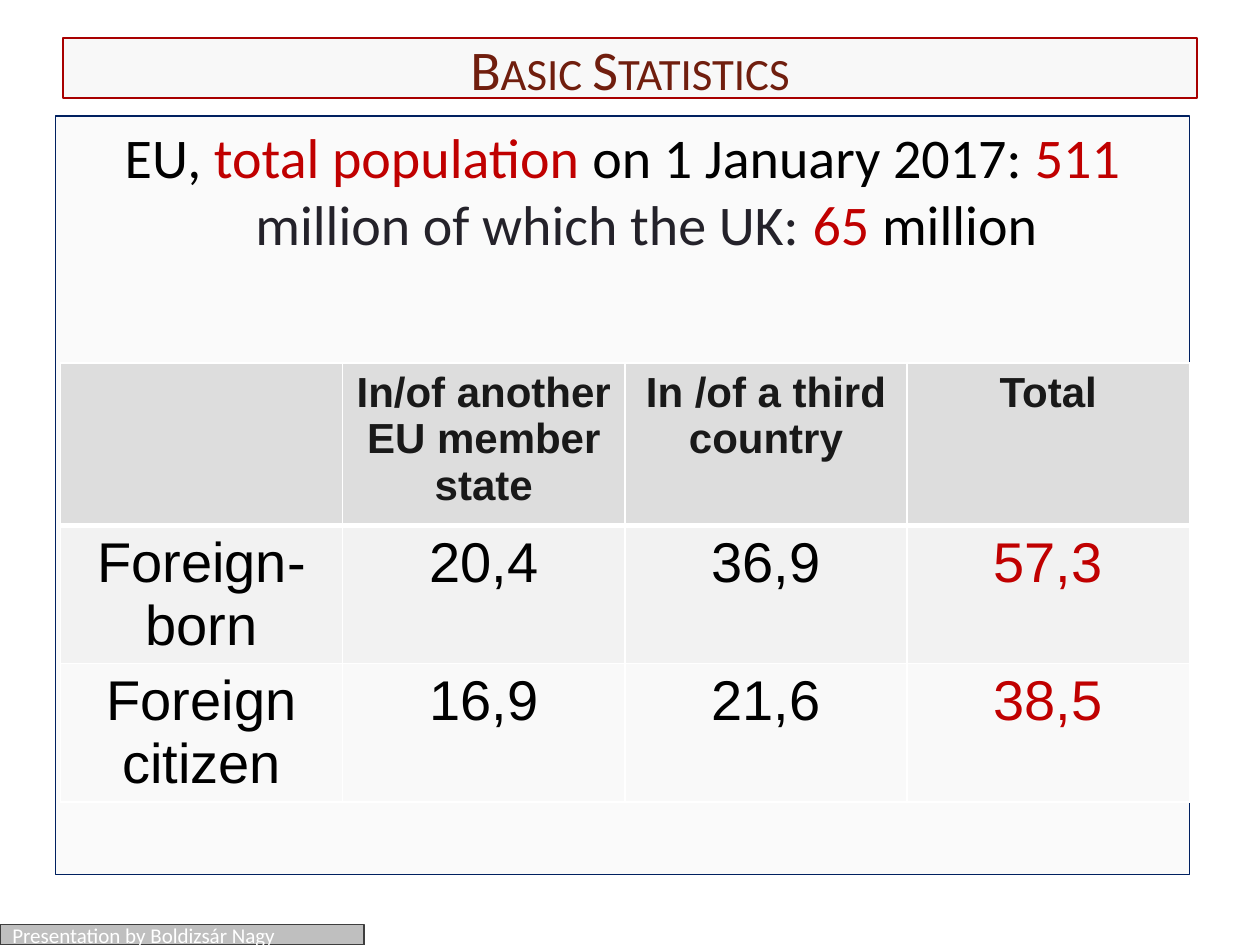
from dataclasses import dataclass

from lxml.etree import SubElement
from pptx import Presentation
from pptx.dml.color import RGBColor as RGB
from pptx.enum.shapes import MSO_SHAPE as Shape
from pptx.enum.text import MSO_ANCHOR as Anchor, PP_ALIGN as Align
from pptx.oxml.ns import qn
from pptx.util import Inches, Pt


@dataclass(frozen=True)
class Theme:
    """Colours, fonts and type sizes of the slide."""
    white: str = "FFFFFF"
    black: str = "000000"
    red: str = "C00000"
    ink: str = "24222A"
    title: str = "701E0E"
    title_line: str = "A80000"
    body_line: str = "002060"
    panel: str = "F2F2F2"
    head_fill: str = "DDDDDD"
    head_text: str = "191919"
    last_fill: str = "F9F9F9"
    foot_fill: str = "BFBFBF"
    foot_line: str = "3E3E3E"
    text_font: str = "Calibri"
    table_font: str = "Arial"
    large: int = 32
    medium: int = 24
    small: int = 12


T = Theme()
W, H = Inches(10), Inches(7.5)


def area(x, y, w, h):
    """Turn percentages of the slide into lengths."""
    return [round(v * side / 100) for v, side in zip((x, y, w, h), (W, H, W, H))]


def add_run(p, text, color, size, font, bold=False):
    """Append one formatted run to a paragraph."""
    r = p.add_run()
    r.text = text
    f = r.font
    f.name, f.size, f.bold = font, Pt(size), bold
    f.color.rgb = RGB.from_string(color)
    return r


def add_panel(slide, box, fill, line, width, anchor, alpha=None):
    """Add an outlined rectangle and return its first paragraph."""
    sp = slide.shapes.add_shape(Shape.RECTANGLE, *area(*box))
    sp.shadow.inherit = False
    sp.fill.solid()
    sp.fill.fore_color.rgb = RGB.from_string(fill)
    if alpha is not None:
        clr = sp._element.spPr.find(qn("a:solidFill"))[0]
        SubElement(clr, qn("a:alpha"), val=str(alpha * 1000))
    sp.line.color.rgb = RGB.from_string(line)
    sp.line.width = Pt(width)
    tf = sp.text_frame
    tf.word_wrap, tf.vertical_anchor = True, anchor
    return tf.paragraphs[0]


def add_title(slide):
    """Add the small-caps heading."""
    p = add_panel(slide, (5, 4, 90, 6.4), T.panel, T.title_line, 1.25, Anchor.MIDDLE, 50)
    p.alignment = Align.CENTER
    r = add_run(p, "Basic Statistics", T.title, T.large, T.text_font)
    r.font._element.set("cap", "small")


def add_population(slide):
    """Add the panel with the population statement."""
    p = add_panel(slide, (4.4, 12.27, 90, 80.27), T.panel, T.body_line, 0.75, Anchor.TOP, 32)
    p.alignment, p.space_before = Align.CENTER, Pt(T.large * 0.2)
    pPr = p._p.get_or_add_pPr()
    indent = Inches(0.38)
    pPr.set("marL", str(indent))
    pPr.set("indent", str(-indent))
    for text, color in (
        ("EU, ", T.black),
        ("total population ", T.red),
        ("on 1 January 2017: ", T.black),
        ("511 ", T.red),
        ("million of which the UK: ", T.ink),
        ("65 ", T.red),
        ("million", T.black),
    ):
        add_run(p, text, color, T.large, T.text_font)


def add_footer(slide):
    """Add the presenter strip."""
    p = add_panel(slide, (0, 97.87, 28.9, 2.13), T.foot_fill, T.foot_line, 0.75, Anchor.MIDDLE)
    p.alignment = Align.LEFT
    add_run(p, "Presentation by Boldizsár Nagy", T.white, T.small, T.text_font)


def set_borders(cell, **widths):
    """Draw white cell borders of the given widths in points."""
    tcPr = cell._tc.get_or_add_tcPr()
    for side, width in widths.items():
        ln = SubElement(tcPr, qn(f"a:ln{side}"), w=str(Pt(width)))
        SubElement(SubElement(ln, qn("a:solidFill")), qn("a:srgbClr"), val=T.white)


def fill_cell(cell, text, fill, color, size, bold, top, bottom):
    """Style one table cell and write its text."""
    set_borders(cell, L=1, R=1, T=top, B=bottom)
    cell.fill.solid()
    cell.fill.fore_color.rgb = RGB.from_string(fill)
    p = cell.text_frame.paragraphs[0]
    p.alignment = Align.CENTER
    if text:
        add_run(p, text, color, size, T.table_font, bold)


def add_statistics(slide):
    """Add the table of foreign-born people and foreign citizens."""
    rows = (
        ("", "In/of another EU member state", "In /of a third country", "Total"),
        ("Foreign-born", "20,4", "36,9", "57,3"),
        ("Foreign citizen", "16,9", "21,6", "38,5"),
    )
    fills = (T.head_fill, T.panel, T.last_fill)
    heights = (1.29, 0.98, 0.98)
    table = slide.shapes.add_table(3, 4, *area(4.8, 38.4, 89.6, 43.33)).table
    for i, (texts, fill, height) in enumerate(zip(rows, fills, heights)):
        table.rows[i].height = Inches(height)
        head = i == 0
        for j, text in enumerate(texts):
            color = T.head_text if head else T.red if j == 3 else T.black
            fill_cell(table.cell(i, j), text, fill, color,
                      T.medium if head else T.large, head,
                      top=3 if i == 1 else 1, bottom=3 if head else 1)


def main():
    """Build and save the slide."""
    prs = Presentation()
    prs.slide_width, prs.slide_height = W, H
    s = prs.slides.add_slide(prs.slide_layouts[6])
    s.background.fill.solid()
    s.background.fill.fore_color.rgb = RGB.from_string(T.white)
    add_title(s)
    add_population(s)
    add_footer(s)
    add_statistics(s)
    prs.save("out.pptx")


if __name__ == "__main__":
    main()
